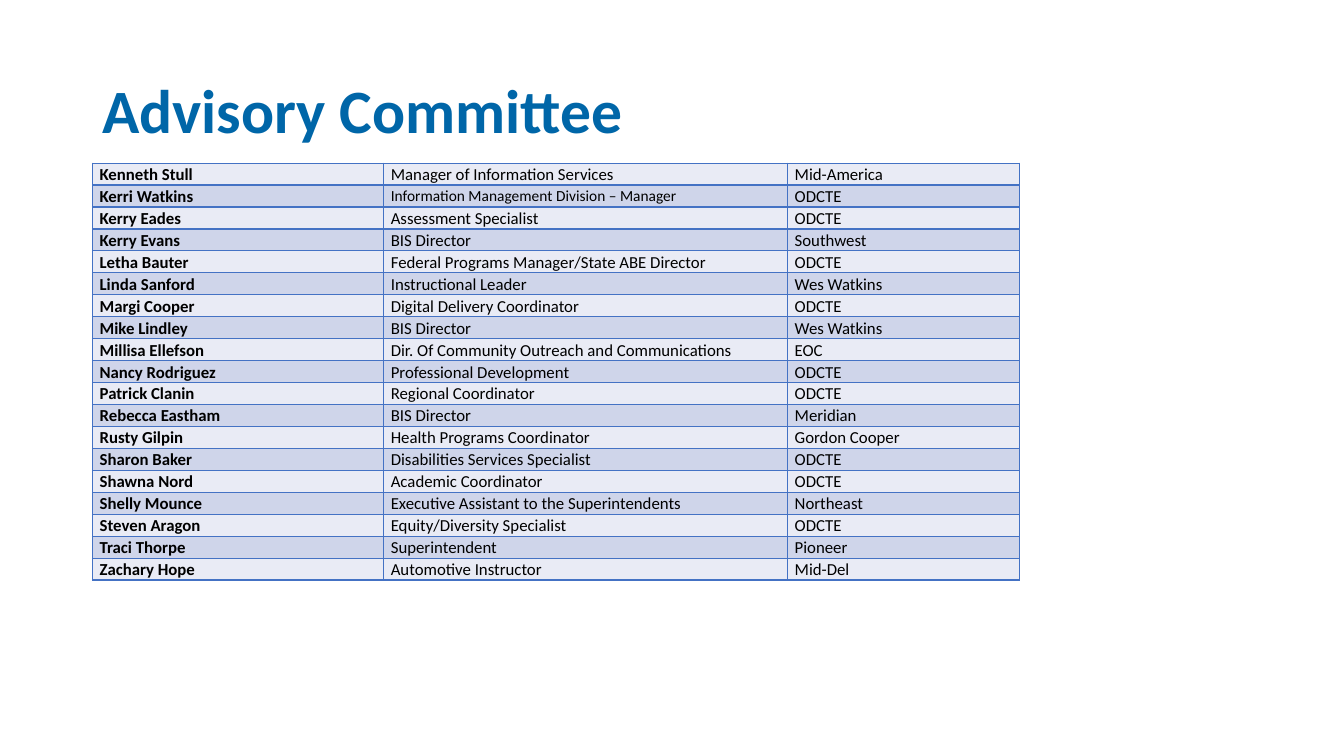
"""Build the Advisory Committee slide with its table of members."""
from dataclasses import dataclass

from lxml import etree
from pptx import Presentation
from pptx.dml.color import RGBColor
from pptx.enum import text
from pptx.oxml import ns
from pptx.util import Pt

MEMBERS = [
    ("Kenneth Stull", "Manager of Information Services", "Mid-America"),
    ("Kerri Watkins", "Information Management Division – Manager", "ODCTE"),
    ("Kerry Eades", "Assessment Specialist", "ODCTE"),
    ("Kerry Evans", "BIS Director", "Southwest"),
    ("Letha Bauter", "Federal Programs Manager/State ABE Director", "ODCTE"),
    ("Linda Sanford", "Instructional Leader", "Wes Watkins"),
    ("Margi Cooper", "Digital Delivery Coordinator", "ODCTE"),
    ("Mike Lindley", "BIS Director", "Wes Watkins"),
    ("Millisa Ellefson", "Dir. Of Community Outreach and Communications", "EOC"),
    ("Nancy Rodriguez", "Professional Development", "ODCTE"),
    ("Patrick Clanin", "Regional Coordinator", "ODCTE"),
    ("Rebecca Eastham", "BIS Director", "Meridian"),
    ("Rusty Gilpin", "Health Programs Coordinator", "Gordon Cooper"),
    ("Sharon Baker", "Disabilities Services Specialist", "ODCTE"),
    ("Shawna Nord", "Academic Coordinator", "ODCTE"),
    ("Shelly Mounce", "Executive Assistant to the Superintendents", "Northeast"),
    ("Steven Aragon", "Equity/Diversity Specialist", "ODCTE"),
    ("Traci Thorpe", "Superintendent", "Pioneer"),
    ("Zachary Hope", "Automotive Instructor", "Mid-Del"),
]
SMALL_ROLE = (1, 1)


@dataclass(frozen=True)
class Theme:
    font: str = "Calibri"
    heading: str = "0066A8"
    body: str = "000000"
    border: str = "4472C4"
    bands: tuple = ("E9EBF5", "CFD5EA")
    heading_size: float = 44
    body_size: float = 12
    small_size: float = 11


class SlideBuilder:
    def __init__(self, slide, theme):
        self.slide = slide
        self.theme = theme

    def set_words(self, frame, wording, size, color, bold, spacing):
        frame.text = wording
        paragraph = frame.paragraphs[0]
        paragraph.alignment = text.PP_ALIGN.LEFT
        paragraph.line_spacing = spacing
        font = paragraph.runs[0].font
        font.name, font.size, font.bold = self.theme.font, Pt(size), bold
        font.color.rgb = RGBColor.from_string(color)

    def title(self, wording, left, top, width, height):
        heading = self.slide.shapes.title
        heading.left, heading.top = Pt(left), Pt(top)
        heading.width, heading.height = Pt(width), Pt(height)
        self.set_words(heading.text_frame, wording, self.theme.heading_size,
                       self.theme.heading, True, 0.9)
        heading.text_frame.vertical_anchor = text.MSO_ANCHOR.MIDDLE

    def outline(self, cell):
        properties = cell._tc.get_or_add_tcPr()
        for side in ("lnL", "lnR", "lnT", "lnB"):
            line = etree.SubElement(properties, ns.qn(f"a:{side}"), w=str(Pt(1)))
            fill = etree.SubElement(line, ns.qn("a:solidFill"))
            etree.SubElement(fill, ns.qn("a:srgbClr"), val=self.theme.border)

    def table(self, rows, left, top, widths, row_height, small):
        roster = self.slide.shapes.add_table(
            len(rows), len(widths), Pt(left), Pt(top),
            Pt(sum(widths)), Pt(row_height * len(rows))).table
        roster.first_row = roster.horz_banding = False
        for column, width in zip(roster.columns, widths):
            column.width = Pt(width)
        for r, row in enumerate(rows):
            roster.rows[r].height = Pt(row_height)
            for c, wording in enumerate(row):
                cell = roster.cell(r, c)
                cell.margin_left = cell.margin_right = Pt(5.2)
                cell.margin_top = cell.margin_bottom = 0
                size = self.theme.small_size if (r, c) == small else self.theme.body_size
                self.set_words(cell.text_frame, wording, size, self.theme.body, c == 0, 1.07)
                self.outline(cell)
                cell.fill.solid()
                cell.fill.fore_color.rgb = RGBColor.from_string(self.theme.bands[r % 2])


def main():
    deck = Presentation()
    deck.slide_width, deck.slide_height = Pt(960), Pt(540)
    title_only = deck.slide_layouts[5]
    builder = SlideBuilder(deck.slides.add_slide(title_only), Theme())
    builder.title("Advisory Committee", 66, 28.75, 828, 104.4)
    builder.table(MEMBERS, 66, 116.5, (208, 288.5, 165.9), 15.42, SMALL_ROLE)
    deck.save("out.pptx")


if __name__ == "__main__":
    main()
